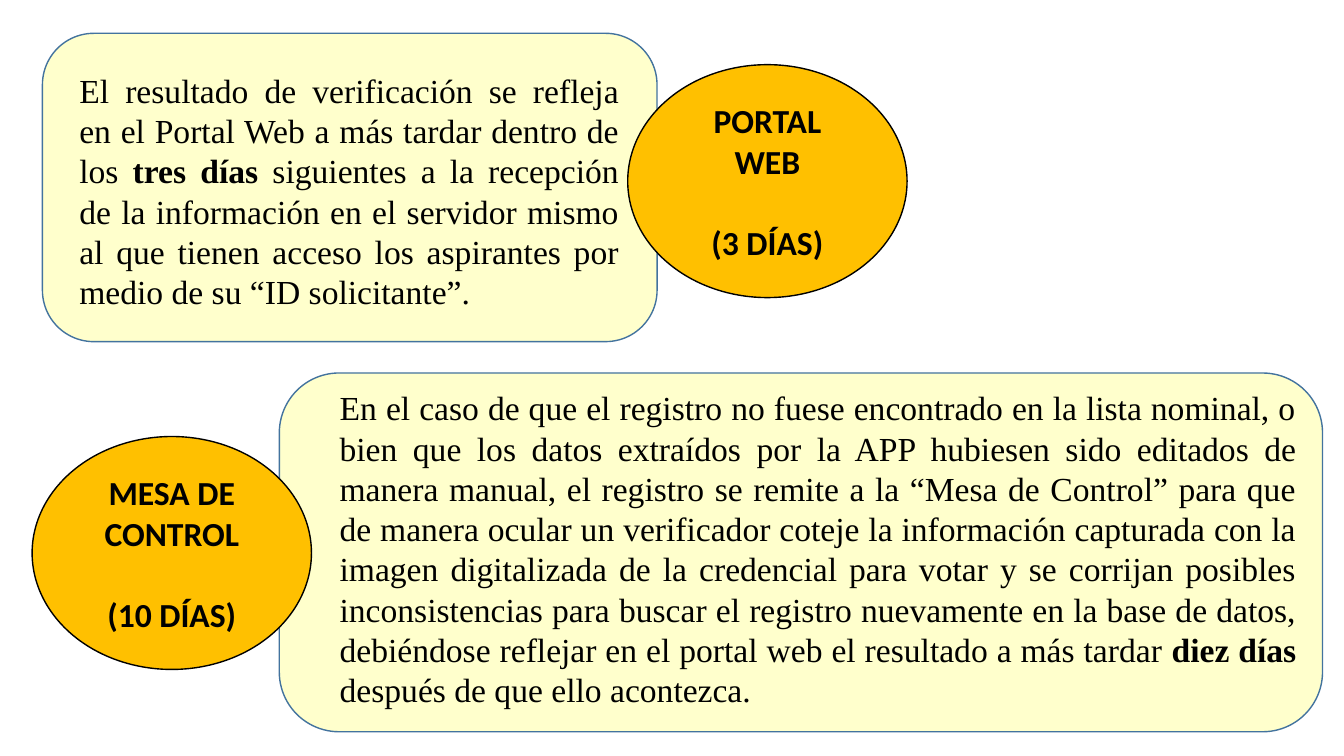
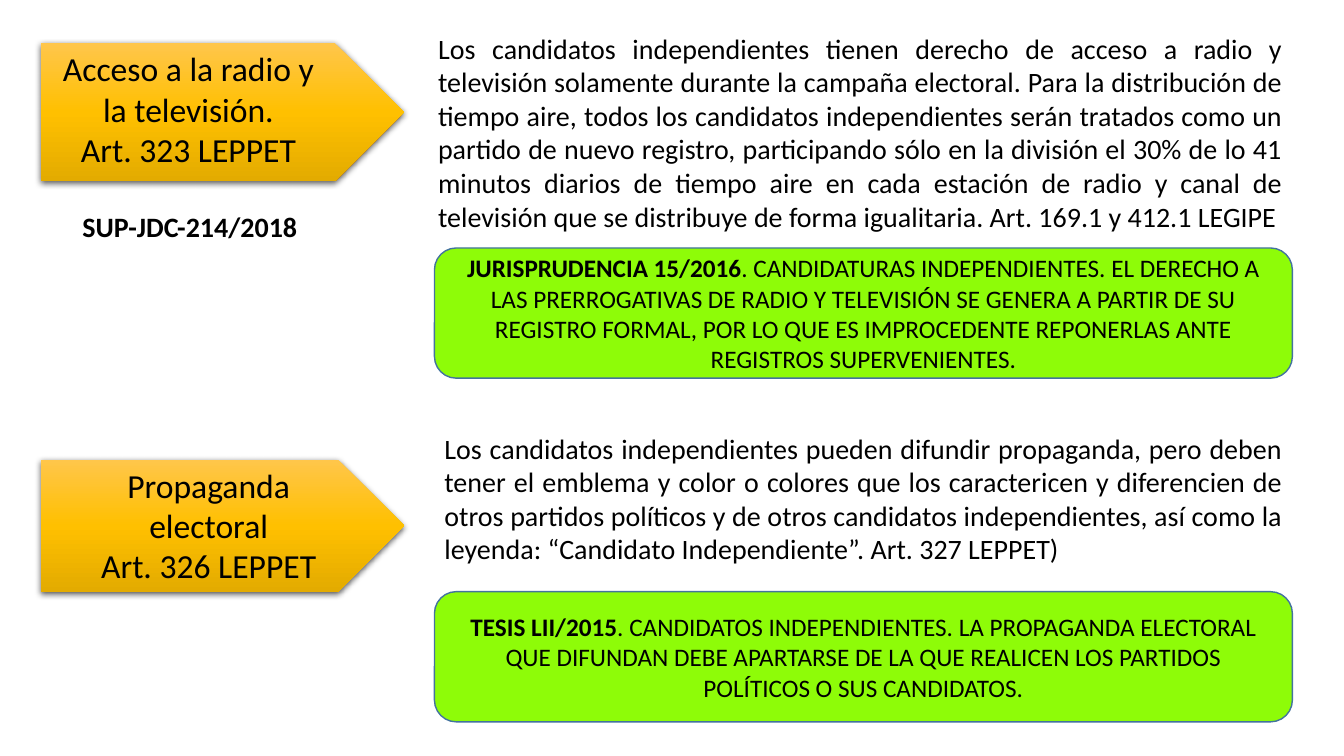
from copy import deepcopy
from lxml.etree import SubElement
from pptx import Presentation
from pptx.dml.color import RGBColor
from pptx.enum.shapes import MSO_SHAPE
from pptx.enum.text import MSO_ANCHOR, PP_ALIGN
from pptx.oxml.ns import qn
from pptx.util import Cm, Pt

COLORS = {
    "ink": "000000",
    "edge": "43739E",
    "cream": "FFFFCC",
    "gold": "FFC000",
    "light": "FFC64B",
    "dark": "E3AB00",
    "lime": "8EFC08",
}
SANS, SERIF = "Calibri", "Times New Roman"
DISC = (7.04, 5.87)


def tint(name):
    return RGBColor.from_string(COLORS[name])


def write(shape, lines, size, align, font=SANS, bold=False, anchor=MSO_ANCHOR.TOP):
    frame = shape.text_frame
    frame.word_wrap = True
    frame.vertical_anchor = anchor
    for pos, line in enumerate(lines):
        para = frame.paragraphs[0] if pos == 0 else frame.add_paragraph()
        para.alignment = align
        for part, text in enumerate(line.split("*")):
            if not text:
                continue
            run = para.add_run()
            run.text = text
            run.font.name = font
            run.font.size = Pt(size)
            run.font.bold = bold or part % 2 == 1
            run.font.color.rgb = tint("ink")
    return frame


def draw(slide, kind, box, fill, edge):
    shape = slide.shapes.add_shape(kind, *map(Cm, box))
    shape.shadow.inherit = False
    shape.fill.solid()
    shape.fill.fore_color.rgb = tint(fill)
    shape.line.color.rgb = tint(edge)
    shape.line.width = Pt(1)
    return shape


def note(slide, box, lines, size, align, **style):
    area = slide.shapes.add_textbox(*map(Cm, box))
    write(area, lines, size, align, **style)


def arrow(slide, box):
    shape = slide.shapes.add_shape(MSO_SHAPE.PENTAGON, *map(Cm, box))
    shape.line.fill.background()
    shape.fill.gradient()
    shape.fill.gradient_angle = 270
    props = shape._element.spPr
    stops = props.find(qn("a:gradFill")).find(qn("a:gsLst"))
    stops.append(deepcopy(stops[-1]))
    shades = ((0, "light"), (0.5, "gold"), (1, "dark"))
    for stop, (place, name) in zip(shape.fill.gradient_stops, shades):
        stop.position = place
        stop.color.rgb = tint(name)
    shape.shadow.inherit = False
    shade = SubElement(props.find(qn("a:effectLst")), qn("a:outerShdw"),
                       blurRad=str(Pt(4.5)), dist=str(Pt(1.5)),
                       dir="5400000", algn="ctr", rotWithShape="0")
    color = SubElement(shade, qn("a:srgbClr"), val=COLORS["ink"])
    SubElement(color, qn("a:alpha"), val="63000")


def card(slide, box, inner, text):
    left, top = box[:2]
    dx, dy, width, height = inner
    draw(slide, MSO_SHAPE.ROUNDED_RECTANGLE, box, "cream", "edge")
    note(slide, (left + dx, top + dy, width, height), [text], 24,
         PP_ALIGN.JUSTIFY, font=SERIF)


def disc(slide, box, shift, lines):
    left, top = box[0] + shift[0], box[1] + shift[1]
    shape = draw(slide, MSO_SHAPE.OVAL, (left, top, *DISC), "gold", "ink")
    frame = write(shape, lines, 24, PP_ALIGN.CENTER, bold=True,
                  anchor=MSO_ANCHOR.MIDDLE)
    frame.paragraphs[-1].space_before = Pt(29)


def topic(slide, box, drop, tall, nudge, label, indent, body, ruling):
    left, top, width, height = box
    arrow(slide, (left, top + drop, 9.14, tall))
    note(slide, (left + nudge, top + drop, 7.42, 3.33), label, 24, PP_ALIGN.CENTER)
    note(slide, (left + indent, top, width - indent, height - 3.5), [body], 20,
         PP_ALIGN.JUSTIFY)
    rule = draw(slide, MSO_SHAPE.ROUNDED_RECTANGLE,
                (left + 9.91, top + height - 3.28, width - 9.91, 3.28),
                "lime", "edge")
    write(rule, [ruling], 18, PP_ALIGN.CENTER, anchor=MSO_ANCHOR.MIDDLE)


def terms(slide):
    web = (1.07, 0.84, 15.49, 7.77)
    desk = (7.04, 9.4, 26.29, 9.04)
    card(slide, web, (0.68, 0.79, 14.1, 6.4),
         "El resultado de verificación se refleja en el Portal Web a más tardar "
         "dentro de los *tres días *siguientes a la recepción de la información en "
         "el servidor mismo al que tienen acceso los aspirantes por medio de su "
         "“ID solicitante”.")
    card(slide, desk, (1.27, 0.23, 24.61, 8.46),
         "En el caso de que el registro no fuese encontrado en la lista nominal, o "
         "bien que los datos extraídos por la APP hubiesen sido editados de manera "
         "manual, el registro se remite a la “Mesa de Control” para que de manera "
         "ocular un verificador coteje la información capturada con la imagen "
         "digitalizada de la credencial para votar y se corrijan posibles "
         "inconsistencias para buscar el registro nuevamente en la base de datos, "
         "debiéndose reflejar en el portal web el resultado a más tardar "
         "*diez días *después de que ello acontezca.")
    disc(slide, desk, (-6.23, 1.6), ["MESA DE CONTROL", "(10 DÍAS)"])
    disc(slide, web, (14.75, 0.79), ["PORTAL WEB", "(3 DÍAS)"])


def rights(slide):
    topic(slide, (1.04, 0.66, 31.53, 8.87), 0.43, 3.48, 0,
          ["Acceso a la radio y la televisión.", "Art. 323 LEPPET"], 9.75,
          "Los candidatos independientes tienen derecho de acceso a radio y "
          "televisión solamente durante la campaña electoral. Para la distribución "
          "de tiempo aire, todos los candidatos independientes serán tratados como "
          "un partido de nuevo registro, participando sólo en la división el 30% de "
          "lo 41 minutos diarios de tiempo aire en cada estación de radio y canal de "
          "televisión que se distribuye de forma igualitaria. Art. 169.1 y 412.1 "
          "LEGIPE",
          "*JURISPRUDENCIA 15/2016*. CANDIDATURAS INDEPENDIENTES. EL DERECHO A LAS "
          "PRERROGATIVAS DE RADIO Y TELEVISIÓN SE GENERA A PARTIR DE SU REGISTRO "
          "FORMAL, POR LO QUE ES IMPROCEDENTE REPONERLAS ANTE REGISTROS "
          "SUPERVENIENTES.")
    topic(slide, (1.04, 10.74, 31.53, 7.45), 0.84, 3.33, 0.51,
          ["Propaganda electoral", "Art. 326 LEPPET"], 9.91,
          "Los candidatos independientes pueden difundir propaganda, pero deben "
          "tener el emblema y color o colores que los caractericen y diferencien de "
          "otros partidos políticos y de otros candidatos independientes, así como "
          "la leyenda: “Candidato Independiente”. Art. 327 LEPPET)",
          "*TESIS LII/2015*. CANDIDATOS INDEPENDIENTES. LA PROPAGANDA ELECTORAL QUE "
          "DIFUNDAN DEBE APARTARSE DE LA QUE REALICEN LOS PARTIDOS POLÍTICOS O SUS "
          "CANDIDATOS.")
    note(slide, (1.83, 5.16, 6, 1.12), ["SUP-JDC-214/2018"], 20,
         PP_ALIGN.LEFT, bold=True)


def main():
    deck = Presentation()
    deck.slide_width, deck.slide_height = Cm(33.87), Cm(19.05)
    for build in (terms, rights):
        build(deck.slides.add_slide(deck.slide_layouts[6]))
    deck.save("out.pptx")


if __name__ == "__main__":
    main()
